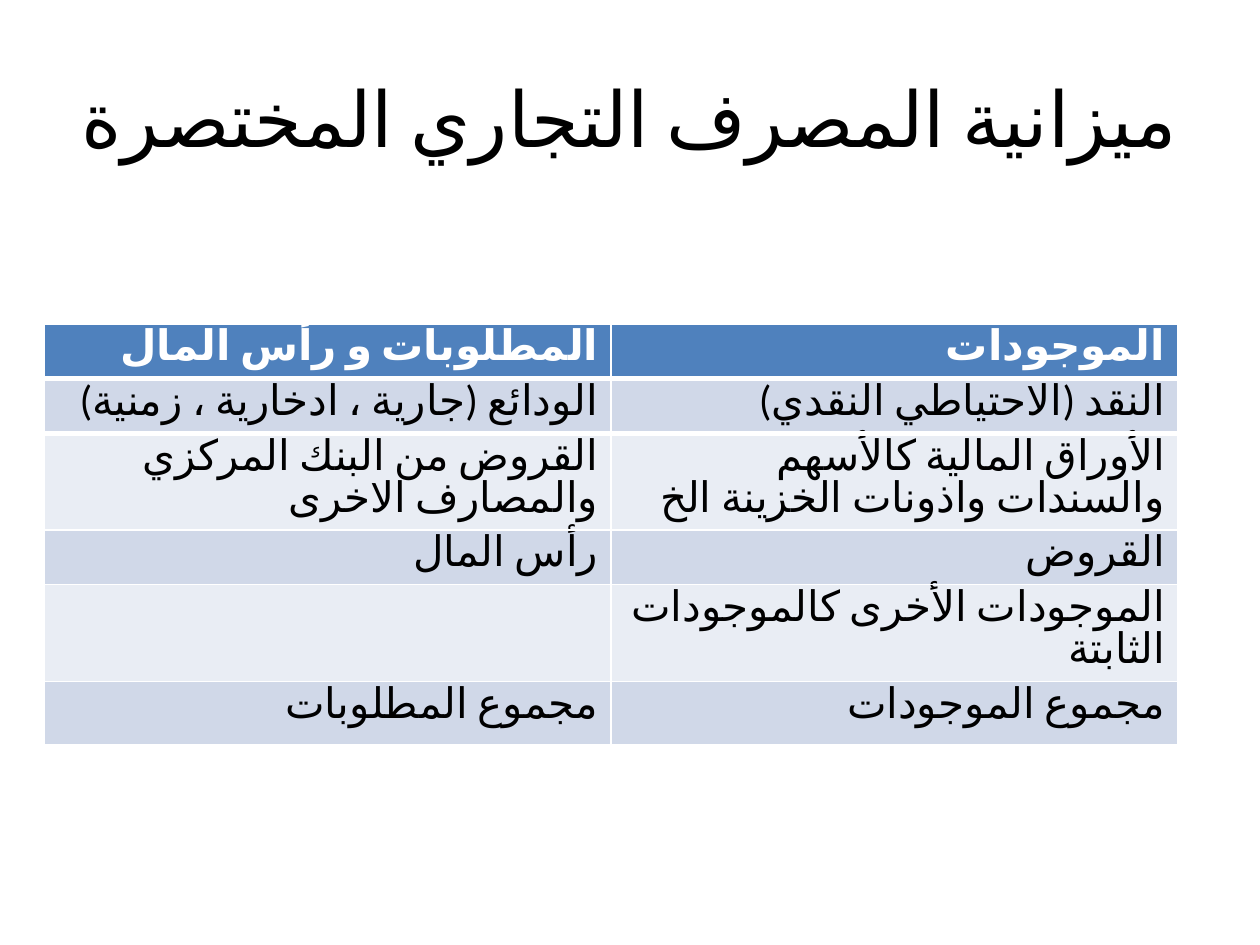
"""Build a slide with the condensed balance sheet of a commercial bank."""
from lxml import etree
from pptx import Presentation
from pptx.dml.color import RGBColor
from pptx.enum.text import MSO_ANCHOR, PP_ALIGN
from pptx.oxml.ns import qn
from pptx.util import Pt

PX = 914400 // 126
CENTER = PP_ALIGN.CENTER
RIGHT = PP_ALIGN.RIGHT
MIDDLE = MSO_ANCHOR.MIDDLE
BLACK = RGBColor(0x00, 0x00, 0x00)
WHITE = RGBColor(0xFF, 0xFF, 0xFF)
HEADER_BLUE = RGBColor(0x4F, 0x81, 0xBD)
BAND_DARK = RGBColor(0xD0, 0xD8, 0xE8)
BAND_LIGHT = RGBColor(0xE9, 0xED, 0xF4)

BALANCE_SHEET = [
    ("المطلوبات و رأس المال", "الموجودات"),
    ("الودائع (جارية ، ادخارية ، زمنية)", "النقد (الاحتياطي النقدي)"),
    ("القروض من البنك المركزي والمصارف الاخرى",
     "الأوراق المالية كالأسهم والسندات واذونات الخزينة الخ"),
    ("رأس المال", "القروض"),
    ("", "الموجودات الأخرى كالموجودات الثابتة"),
    ("مجموع المطلوبات", "مجموع الموجودات"),
]
ROW_HEIGHTS = [52, 52, 52, 52, 63, 63]


def write_rtl(paragraph, text, size, color, align, bold=False):
    paragraph.alignment = align
    paragraph._p.get_or_add_pPr().set("rtl", "1")
    run = paragraph.add_run()
    run.text = text
    run.font.name = "Calibri"
    run.font.size = Pt(size)
    run.font.bold = bold
    run.font.color.rgb = color
    properties = run._r.get_or_add_rPr()
    properties.set("lang", "ar-SA")
    etree.SubElement(properties, qn("a:cs"), typeface="Calibri")


def add_white_border(cell, side, points):
    border = etree.Element(qn(side), w=str(Pt(points)))
    fill = etree.SubElement(border, qn("a:solidFill"))
    etree.SubElement(fill, qn("a:srgbClr"), val=str(WHITE))
    cell._tc.get_or_add_tcPr().insert(0, border)


presentation = Presentation()
presentation.slide_width = 1260 * PX
presentation.slide_height = 945 * PX
slide = presentation.slides.add_slide(presentation.slide_layouts[6])

title = slide.shapes.add_textbox(63 * PX, 38 * PX, 1134 * PX, 158 * PX).text_frame
title.word_wrap = True
title.vertical_anchor = MIDDLE
write_rtl(title.paragraphs[0], "ميزانية المصرف التجاري المختصرة", 44, BLACK, CENTER)

balance = slide.shapes.add_table(
    len(BALANCE_SHEET), 2, 44 * PX, 324 * PX, 1134 * PX, sum(ROW_HEIGHTS) * PX
).table
for row_index, entries in enumerate(BALANCE_SHEET):
    balance.rows[row_index].height = ROW_HEIGHTS[row_index] * PX
    is_header = row_index == 0
    band = BAND_DARK if row_index % 2 else BAND_LIGHT
    for column_index, entry in enumerate(entries):
        cell = balance.cell(row_index, column_index)
        cell.fill.solid()
        cell.fill.fore_color.rgb = HEADER_BLUE if is_header else band
        if is_header:
            add_white_border(cell, "a:lnB", 3)
        elif row_index == 1:
            add_white_border(cell, "a:lnT", 3)
        if entry:
            line = cell.text_frame.paragraphs[0]
            line.line_spacing = Pt(24)
            write_rtl(line, entry, 24, WHITE if is_header else BLACK, RIGHT, is_header)

presentation.save("out.pptx")
